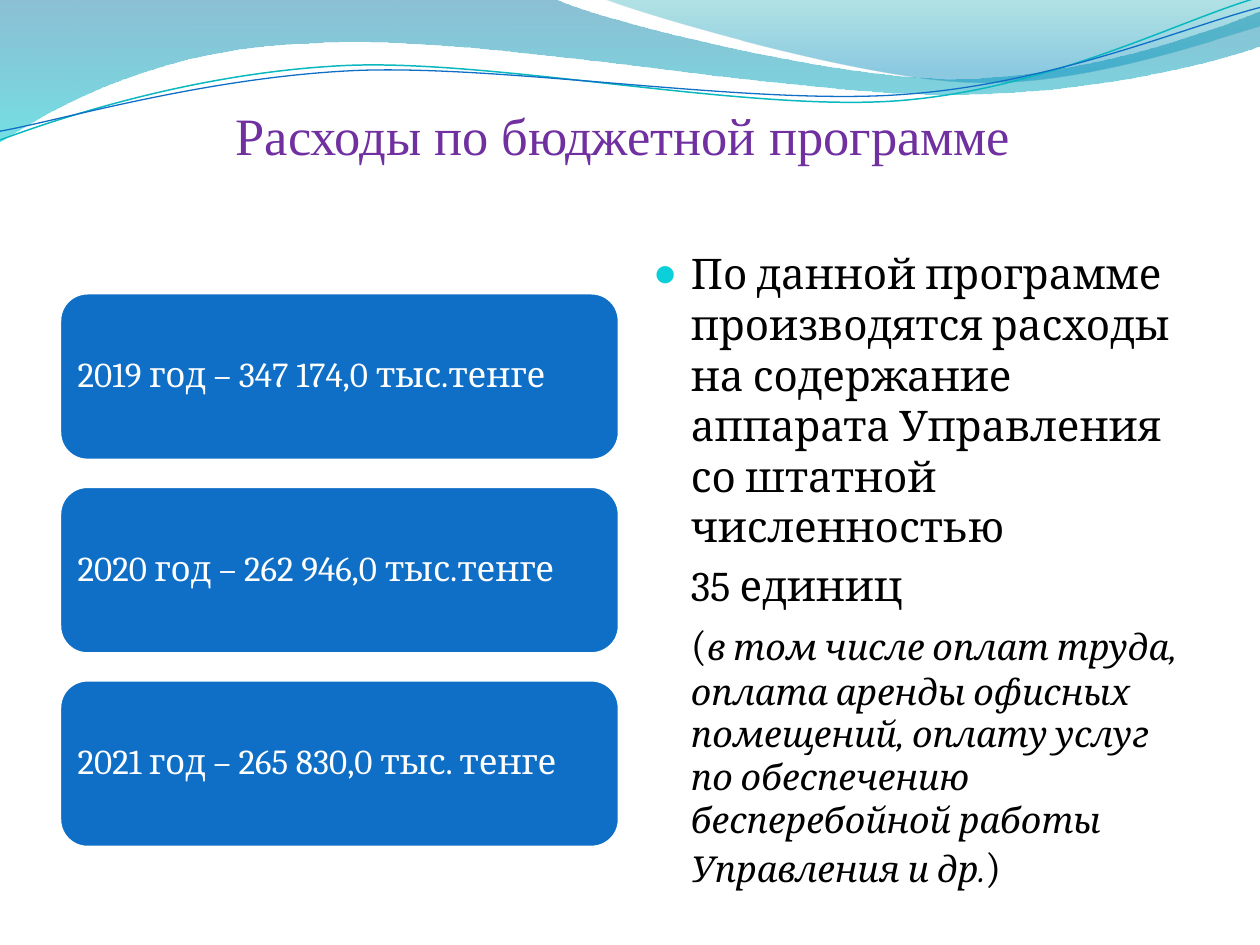
from pptx import Presentation
from pptx.dml.color import RGBColor
from pptx.enum.shapes import MSO_SHAPE as SHAPE
from pptx.enum.text import MSO_ANCHOR as ANCHOR, MSO_AUTO_SIZE as AUTOFIT, PP_ALIGN as ALIGN
from pptx.oxml.ns import qn
from pptx.util import Pt
from lxml.etree import SubElement

BLUE = RGBColor(0x0F, 0x6F, 0xC6)
TEAL = RGBColor(0x0A, 0xB8, 0xBF)
CYAN = RGBColor(0x0B, 0xD0, 0xD9)
PURPLE = RGBColor(0x70, 0x30, 0xA0)
WHITE = RGBColor(0xFF, 0xFF, 0xFF)
BLACK = RGBColor(0, 0, 0)
WAVE_TOP, WAVE_BOTTOM = RGBColor(0, 0x74, 0xA1), RGBColor(0, 0xC6, 0xCF)
CREST_TOP, CREST_BOTTOM = RGBColor(0, 0xA1, 0xA9), RGBColor(0, 0x8B, 0xBF)

# Outlines in points: a pair is a straight step, six numbers are a Bezier curve
WAVE = [(0, 0), (317, -0.7), (343, 12, 478, 45, 546, 45), (614, 45, 690, 19, 720, 6.5),
        (721, 26), (708, 32, 626, 55, 537, 54), (448, 54, 275, 20, 185, 24.5),
        (93, 26, 33, 60, -0.7, 81.4), (0, 0)]
CREST = [(345, -0.7), (366, 8, 491, 45, 554, 47), (616, 50, 692, 23, 720, 15),
         (720, 0), (345, -0.7)]
TEAL_CURVE = [(0, 80), (35, 67, 114, 41, 199, 37.4), (284, 34, 427, 64, 513, 57.6),
              (600, 51, 675, 11, 719, -1.4)]
BLUE_CURVE = [(0, 75), (34, 69, 118, 44, 204, 40.3), (290, 37, 430, 60.5, 516, 54),
              (602, 48, 678, 15, 720, 4.3)]

CARDS = ["2019 год – 347 174,0 тыс.тенге",
         "2020 год – 262 946,0 тыс.тенге",
         "2021 год – 265 830,0 тыс. тенге"]
CARD_TOP, CARD_PITCH = 167.3, 110.6


def set_all(target, values):
    for name, value in values.items():
        setattr(target, name, value)


class Builder:
    TITLE = {"name": "Times New Roman", "size": Pt(30)}
    CARD = {"name": "Cambria", "size": Pt(20)}
    BODY = {"name": "Cambria", "size": Pt(24.1)}
    NOTE = {"name": "Cambria", "size": Pt(20.4), "italic": True}

    def __init__(self, slide):
        self.s = slide

    def place(self, sp, left, top, width, height):
        set_all(sp, {"left": Pt(left), "top": Pt(top),
                     "width": Pt(width), "height": Pt(height)})

    def run(self, p, text, style, color):
        r = p.add_run()
        r.text = text
        set_all(r.font, style)
        r.font.color.rgb = color

    def outline(self, parts, close):
        """Draw every point as a line step, then join each curve's three into one."""
        start, *rest = [(Pt(part[i]), Pt(part[i + 1]))
                        for part in parts for i in range(0, len(part), 2)]
        builder = self.s.shapes.build_freeform(*start, scale=1.0)
        builder.add_line_segments(rest, close=close)
        sp = builder.convert_to_shape()
        sp.shadow.inherit = False
        steps = iter(list(sp._element.spPr.iter(qn("a:lnTo"))))
        for part in parts[1:]:
            step = next(steps)
            if len(part) == 6:
                step.tag = qn("a:cubicBezTo")
                for _ in range(2):
                    control = next(steps)
                    step.append(control[0])
                    control.getparent().remove(control)
        return sp

    def wave(self, parts, stops):
        sp = self.outline(parts, True)
        sp.line.fill.background()
        sp.fill.gradient()
        sp.fill.gradient_angle = 270
        for stop, (position, color, _) in zip(sp.fill.gradient_stops, stops):
            stop.position = position
            stop.color.rgb = color
        colors = sp._element.spPr.iter(qn("a:srgbClr"))
        for clr, (_, _, opacity) in zip(colors, stops):
            SubElement(clr, qn("a:alpha"), val=str(opacity * 1000))

    def curve(self, parts, color, width):
        sp = self.outline(parts, False)
        sp.fill.background()
        sp.line.color.rgb = color
        sp.line.width = Pt(width)

    def title(self, text, *box):
        sp = self.s.shapes.title
        self.place(sp, *box)
        tf = sp.text_frame
        set_all(tf, {"margin_left": 0, "margin_right": 0, "margin_top": Pt(3.6),
                     "margin_bottom": 0, "vertical_anchor": ANCHOR.TOP,
                     "auto_size": AUTOFIT.NONE})
        p = tf.paragraphs[0]
        p.alignment = ALIGN.CENTER
        self.run(p, text, self.TITLE, PURPLE)

    def card(self, text, *box):
        sp = self.s.shapes.add_shape(SHAPE.ROUNDED_RECTANGLE, *map(Pt, box))
        sp.shadow.inherit = False
        sp.fill.solid()
        sp.fill.fore_color.rgb = BLUE
        sp.line.color.rgb = WHITE
        sp.line.width = Pt(2)
        tf = sp.text_frame
        set_all(tf, {"word_wrap": True, "vertical_anchor": ANCHOR.MIDDLE,
                     "margin_left": Pt(5.7), "margin_right": Pt(5.7)})
        p = tf.paragraphs[0]
        set_all(p, {"alignment": ALIGN.LEFT, "line_spacing": 0.9})
        self.run(p, text, self.CARD, WHITE)

    def body(self, paragraphs, *box):
        sp = self.s.placeholders[1]
        self.place(sp, *box)
        tf = sp.text_frame
        set_all(tf, {"vertical_anchor": ANCHOR.MIDDLE, "auto_size": AUTOFIT.NONE})
        for i, (bullet, runs) in enumerate(paragraphs):
            p = tf.add_paragraph() if i else tf.paragraphs[0]
            set_all(p, {"space_before": Pt(4.8), "line_spacing": 1.0})
            self.bullet(p, bullet)
            for text, style in runs:
                self.run(p, text, style, BLACK)

    def bullet(self, p, char):
        pPr = p._p.get_or_add_pPr()
        pPr.set("marL", str(Pt(21.6)))
        pPr.set("indent", str(Pt(-21.6) if char else 0))
        if not char:
            SubElement(pPr, qn("a:buNone"))
            return
        SubElement(SubElement(pPr, qn("a:buClr")), qn("a:srgbClr"), val=str(CYAN))
        SubElement(pPr, qn("a:buSzPct"), val="95000")
        SubElement(pPr, qn("a:buChar"), char=char)


def main():
    prs = Presentation()
    prs.slide_width, prs.slide_height = Pt(720), Pt(540)
    b = Builder(prs.slides.add_slide(prs.slide_layouts[1]))

    # Wave decoration along the top
    b.wave(WAVE, [(0, WAVE_TOP, 45), (1, WAVE_BOTTOM, 55)])
    b.wave(CREST, [(0, CREST_TOP, 30), (0.8, CREST_BOTTOM, 45)])
    b.curve(TEAL_CURVE, TEAL, 0.85)
    b.curve(BLUE_CURVE, BLUE, 0.75)

    # Title
    b.title("Расходы по бюджетной программе ", 36, 55.4, 648, 90)

    # Yearly amounts
    for i, text in enumerate(CARDS):
        b.card(text, 34, CARD_TOP + i * CARD_PITCH, 320, 95.8)

    # Explanation
    b.body([
        ("●", [("По данной программе производятся расходы на содержание аппарата "
                "Управления со штатной численностью", b.BODY)]),
        (None, [("35 единиц", b.BODY)]),
        (None, [("(", b.BODY),
                ("в том числе оплат труда, оплата аренды офисных помещений, оплату услуг "
                 "по обеспечению бесперебойной работы Управления и др.", b.NOTE),
                (")", b.BODY)]),
    ], 366, 151, 318, 349)

    prs.save("out.pptx")


if __name__ == "__main__":
    main()
